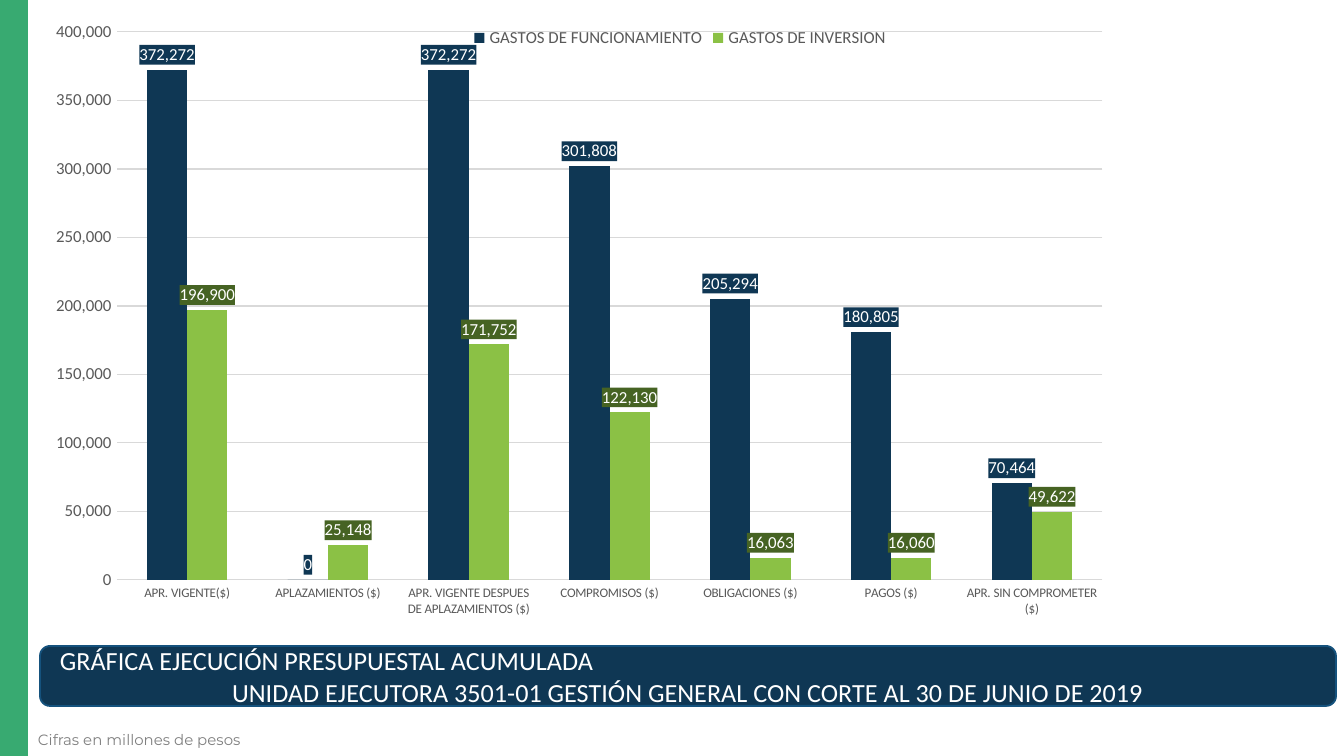
from lxml import etree
from pptx import Presentation
from pptx.chart.data import CategoryChartData
from pptx.dml.color import RGBColor
from pptx.enum import chart as ch, shapes, text
from pptx.oxml.ns import qn
from pptx.util import Pt

SCALE = 914400 / 134.4  # EMU per px
COLORS = {
    "green": "38AA71", "navy": "0F3754", "edge": "15527D", "lime": "8BC145",
    "olive": "466323", "white": "FFFFFF", "gray": "808080", "ink": "595959",
    "grid": "D9D9D9",
}
CATS = [
    "APR. VIGENTE($)", "APLAZAMIENTOS ($)",
    "APR. VIGENTE DESPUES DE APLAZAMIENTOS ($)", "COMPROMISOS ($)",
    "OBLIGACIONES ($)", "PAGOS ($)", "APR. SIN COMPROMETER ($)",
]
# Name, bar colour, label colour, values
SERIES = [
    ("GASTOS DE FUNCIONAMIENTO", "navy", "navy",
     [372272, 0, 372272, 301808, 205294, 180805, 70464]),
    ("GASTOS DE INVERSION", "lime", "olive",
     [196900, 25148, 171752, 122130, 16063, 16060, 49622]),
]
PLOT = {"x": 0.06, "y": 0.03, "w": 0.77, "h": 0.87}


def px(n):
    return round(n * SCALE)


def rgb(name):
    return RGBColor.from_string(COLORS[name])


def style(font, size, color, face="Calibri"):
    font.size, font.name = Pt(size), face
    font.color.rgb = rgb(color)


def add_box(slide, kind, box, fill, edge=None):
    shape = slide.shapes.add_shape(kind, *map(px, box))
    shape.shadow.inherit = False
    shape.fill.solid()
    shape.fill.fore_color.rgb = rgb(fill)
    if edge:
        shape.line.color.rgb = rgb(edge)
        shape.line.width = Pt(1)
    else:
        shape.line.fill.background()
    return shape


def write(frame, lines, size, color, face, pad):
    frame.word_wrap = True
    frame.vertical_anchor = text.MSO_ANCHOR.MIDDLE
    frame.margin_left = frame.margin_right = px(pad)
    frame.margin_top = frame.margin_bottom = px(5)
    for i, (words, align) in enumerate(lines):
        para = frame.add_paragraph() if i else frame.paragraphs[0]
        para.alignment = align
        run = para.add_run()
        run.text = words
        style(run.font, size, color, face)


def set_plot(chart):
    """Fix the inner plot area as fractions of the chart."""
    area = chart._chartSpace.find(".//" + qn("c:plotArea"))
    for old in area.findall(qn("c:layout")):
        area.remove(old)
    layout = etree.Element(qn("c:layout"))
    area.insert(0, layout)
    manual = etree.SubElement(layout, qn("c:manualLayout"))
    parts = [("layoutTarget", "inner"), ("xMode", "edge"), ("yMode", "edge")]
    for tag, val in parts + list(PLOT.items()):
        etree.SubElement(manual, qn("c:" + tag)).set("val", str(val))


def set_label(series, fill):
    labels = series.data_labels
    labels.show_value = True
    labels.number_format = "#,##0"
    labels.number_format_is_linked = False
    labels.position = ch.XL_LABEL_POSITION.OUTSIDE_END
    style(labels.font, 9, "white")
    # Label background follows the number format
    props = etree.Element(qn("c:spPr"))
    solid = etree.SubElement(props, qn("a:solidFill"))
    etree.SubElement(solid, qn("a:srgbClr")).set("val", COLORS[fill])
    labels._element.find(qn("c:numFmt")).addnext(props)


def set_axes(chart):
    cat, val = chart.category_axis, chart.value_axis
    for axis, size in ((cat, 7), (val, 9)):
        axis.major_tick_mark = axis.minor_tick_mark = ch.XL_TICK_MARK.NONE
        style(axis.tick_labels.font, size, "ink")
    cat.format.line.color.rgb = rgb("grid")
    val.format.line.fill.background()
    val.minimum_scale, val.maximum_scale, val.major_unit = 0, 400000, 50000
    val.tick_labels.number_format = "#,##0"
    val.tick_labels.number_format_is_linked = False
    val.has_major_gridlines = True
    grid = val.major_gridlines.format.line
    grid.color.rgb, grid.width = rgb("grid"), Pt(0.75)


def add_bars(slide, box):
    data = CategoryChartData(number_format="#,##0")
    data.categories = CATS
    for name, _, _, vals in SERIES:
        data.add_series(name, vals)
    kind = ch.XL_CHART_TYPE.COLUMN_CLUSTERED
    chart = slide.shapes.add_chart(kind, *map(px, box), data).chart
    chart.has_title = False
    chart.font.size, chart.font.name = Pt(10), "Calibri"
    plot = chart.plots[0]
    plot.gap_width, plot.overlap, plot.vary_by_categories = 150, 0, False
    for series, (_, color, fill, _) in zip(plot.series, SERIES):
        series.format.fill.solid()
        series.format.fill.fore_color.rgb = rgb(color)
        series.invert_if_negative = False
        set_label(series, fill)
    set_axes(chart)
    set_plot(chart)
    # Legend over the plot
    chart.has_legend = True
    chart.legend.position = ch.XL_LEGEND_POSITION.TOP
    chart.legend.include_in_layout = True
    style(chart.legend.font, 9, "ink")


def main():
    deck = Presentation()
    deck.slide_width, deck.slide_height = px(1344), px(756)
    slide = deck.slides.add_slide(deck.slide_layouts[6])
    left, center = text.PP_ALIGN.LEFT, text.PP_ALIGN.CENTER
    kinds = shapes.MSO_SHAPE

    # Side band and units note
    add_box(slide, kinds.RECTANGLE, (0, -1, 28, 757), "green")
    note = slide.shapes.add_textbox(*map(px, (28, 726, 241, 27)))
    write(note.text_frame, [("Cifras en millones de pesos", left)],
          8, "gray", "Montserrat", 10)

    # Title banner
    banner = add_box(slide, kinds.ROUNDED_RECTANGLE, (40, 646, 1296, 60),
                     "navy", "edge")
    write(banner.text_frame, [
        ("GRÁFICA EJECUCIÓN PRESUPUESTAL ACUMULADA", left),
        ("UNIDAD EJECUTORA 3501-01 GESTIÓN GENERAL CON CORTE AL "
         "30 DE JUNIO DE 2019", center),
    ], 14, "white", "Calibri", 17)

    # Budget chart
    add_bars(slide, (40, 13, 1280, 630))
    deck.save("out.pptx")


if __name__ == "__main__":
    main()
